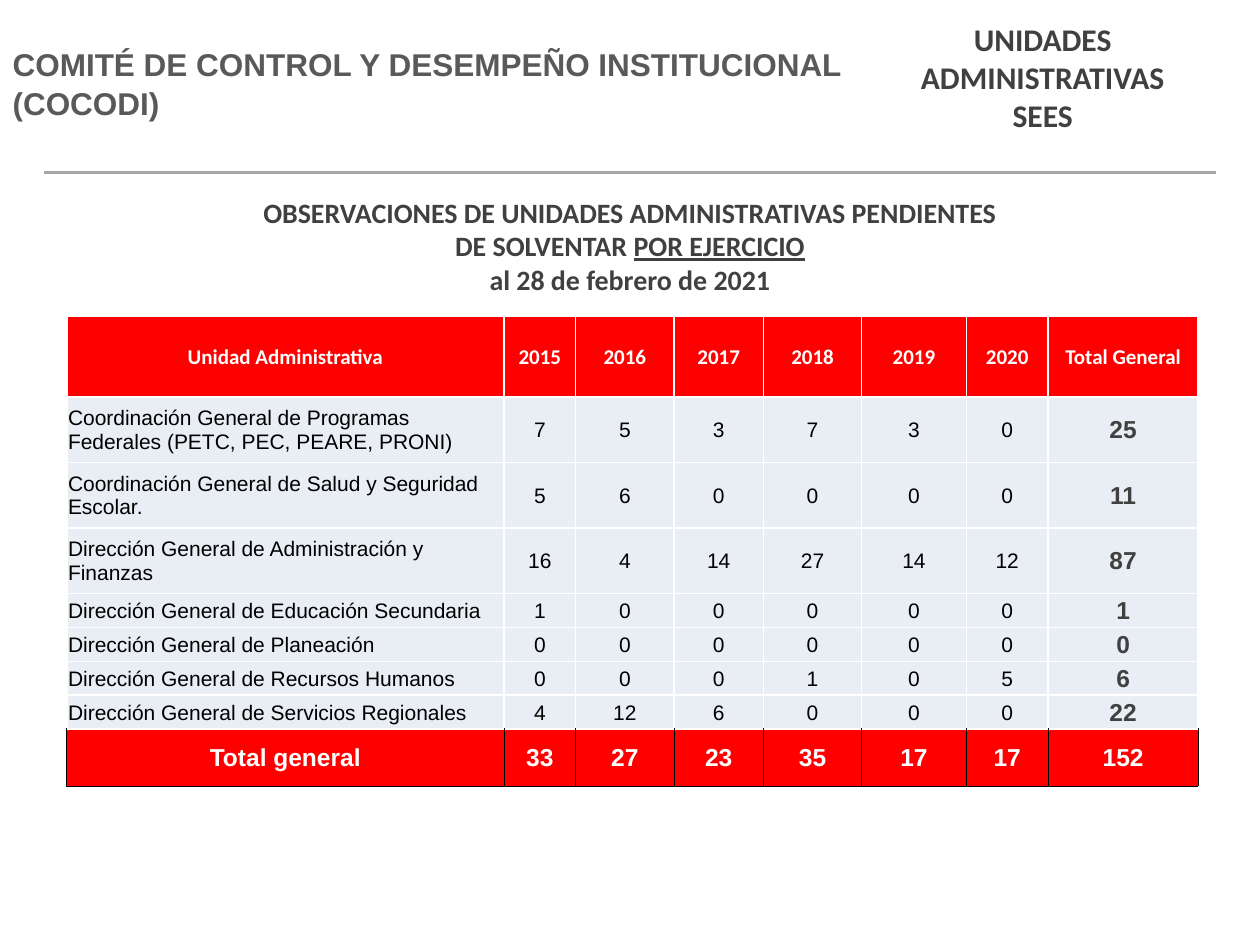
from dataclasses import dataclass

from lxml.etree import SubElement
from pptx import Presentation
from pptx.dml.color import RGBColor
from pptx.enum.shapes import MSO_CONNECTOR
from pptx.enum.text import MSO_ANCHOR as Anchor, PP_ALIGN as Align
from pptx.oxml.ns import qn
from pptx.util import Inches, Pt


@dataclass(frozen=True)
class Theme:
    white: str = "FFFFFF"
    black: str = "000000"
    red: str = "FF0000"
    pale: str = "E9EDF4"
    dark: str = "404040"
    gray: str = "595959"
    rule: str = "A6A6A6"
    head: str = "Calibri"
    body: str = "Arial"
    large: int = 18
    mid: int = 16
    sum: int = 14
    small: int = 12


THEME = Theme()
YEARS = ["2015", "2016", "2017", "2018", "2019", "2020"]
UNITS = [
    ("Coordinación General de Programas Federales (PETC, PEC, PEARE, PRONI)",
     [7, 5, 3, 7, 3, 0]),
    ("Coordinación General de Salud y Seguridad Escolar.", [5, 6, 0, 0, 0, 0]),
    ("Dirección General de Administración y Finanzas", [16, 4, 14, 27, 14, 12]),
    ("Dirección General de Educación Secundaria", [1, 0, 0, 0, 0, 0]),
    ("Dirección General de Planeación", [0, 0, 0, 0, 0, 0]),
    ("Dirección General de Recursos Humanos", [0, 0, 0, 1, 0, 5]),
    ("Dirección General de Servicios Regionales", [4, 12, 6, 0, 0, 0]),
]
WIDTHS = [3.47, 0.57, 0.78, 0.71, 0.78, 0.83, 0.65, 1.19]
HEIGHTS = [0.64] + [0.52] * 3 + [0.27] * 4 + [0.45]


def color(code):
    return RGBColor.from_string(code)


def style(par, font, size, ink, bold=True, align=Align.CENTER):
    par.alignment = align
    for run in par.runs:
        run.font.name = font
        run.font.size = Pt(size)
        run.font.bold = bold
        run.font.color.rgb = color(ink)


def add_title(slide, text):
    title = slide.shapes.title
    title.left, title.top = Inches(0), Inches(0)
    title.width, title.height = Inches(6.93), Inches(1.31)
    title.fill.solid()
    title.fill.fore_color.rgb = color(THEME.white)
    frame = title.text_frame
    frame.text = text
    frame.vertical_anchor = Anchor.MIDDLE
    par = frame.paragraphs[0]
    par.line_spacing = 1.05
    style(par, THEME.body, THEME.large, THEME.gray, align=Align.LEFT)


def add_text(slide, box, text, size):
    frame = slide.shapes.add_textbox(*map(Inches, box)).text_frame
    frame.word_wrap = True
    frame.text = text
    for par in frame.paragraphs:
        style(par, THEME.head, size, THEME.dark)
    return frame


def add_rule(slide, left, right, top):
    line = slide.shapes.add_connector(
        MSO_CONNECTOR.STRAIGHT, Inches(left), Inches(top), Inches(right), Inches(top))
    line.line.color.rgb = color(THEME.rule)
    line.line.width = Pt(1.5)
    SubElement(line._element.spPr, qn("a:effectLst"))


def set_edges(cell, last):
    """White 1 pt edges; the last row has thin black ones except on top."""
    props = cell._tc.get_or_add_tcPr()
    for side in "LRTB":
        thin = last and side != "T"
        edge = SubElement(props, qn(f"a:ln{side}"), w=str(Pt(0.5 if thin else 1)))
        fill = SubElement(edge, qn("a:solidFill"))
        SubElement(fill, qn("a:srgbClr"), val=THEME.black if thin else THEME.white)


def set_cell(cell, text, fill, last, *look):
    cell.text = str(text)
    cell.vertical_anchor = Anchor.MIDDLE
    cell.margin_left = cell.margin_right = cell.margin_top = Inches(0.01)
    cell.margin_bottom = 0
    set_edges(cell, last)
    cell.fill.solid()
    cell.fill.fore_color.rgb = color(fill)
    style(cell.text_frame.paragraphs[0], *look)


def cell_look(row, col, last):
    """Font, size, ink, bold and alignment for a place in the table."""
    if row == 0:
        return THEME.head, THEME.small, THEME.white
    if last:
        return THEME.body, THEME.sum, THEME.white
    if col == len(WIDTHS) - 1:
        return THEME.body, THEME.sum, THEME.dark
    align = Align.CENTER if col else Align.LEFT
    return THEME.body, THEME.small, THEME.black, False, align


def table_rows():
    counts = [nums for _, nums in UNITS]
    sums = [sum(nums) for nums in zip(*counts)]
    yield ["Unidad Administrativa", *YEARS, "Total General"]
    for name, nums in UNITS + [("Total general", sums)]:
        yield [name, *nums, sum(nums)]


def add_grid(slide, left, top):
    rows = list(table_rows())
    table = slide.shapes.add_table(
        len(rows), len(WIDTHS), Inches(left), Inches(top),
        Inches(sum(WIDTHS)), Inches(sum(HEIGHTS))).table
    table.horz_banding = False
    for col, width in zip(table.columns, WIDTHS):
        col.width = Inches(width)
    for row, height in zip(table.rows, HEIGHTS):
        row.height = Inches(height)
    for r, row in enumerate(rows):
        last = r == len(rows) - 1
        fill = THEME.red if r == 0 or last else THEME.pale
        for c, text in enumerate(row):
            set_cell(table.cell(r, c), text, fill, last, *cell_look(r, c, last))


def main():
    deck = Presentation()
    deck.slide_width, deck.slide_height = Inches(10), Inches(7.5)
    slide = deck.slides.add_slide(deck.slide_layouts[5])
    add_title(slide, "COMITÉ DE CONTROL Y DESEMPEÑO INSTITUCIONAL (COCODI)")
    add_text(slide, (6.58, 0.11, 3.39, 1.01),
             "UNIDADES\vADMINISTRATIVAS\nSEES", THEME.large)
    add_rule(slide, 0.35, 9.65, 1.37)
    frame = add_text(
        slide, (1.12, 1.5, 7.76, 0.91),
        "OBSERVACIONES DE UNIDADES ADMINISTRATIVAS PENDIENTES\n"
        "DE SOLVENTAR \nal 28 de febrero de 2021", THEME.mid)
    par = frame.paragraphs[1]
    run = par.add_run()
    run.text = "POR EJERCICIO"
    run.font.underline = True
    style(par, THEME.head, THEME.mid, THEME.dark)
    add_grid(slide, 0.53, 2.51)
    deck.save("out.pptx")


if __name__ == "__main__":
    main()
